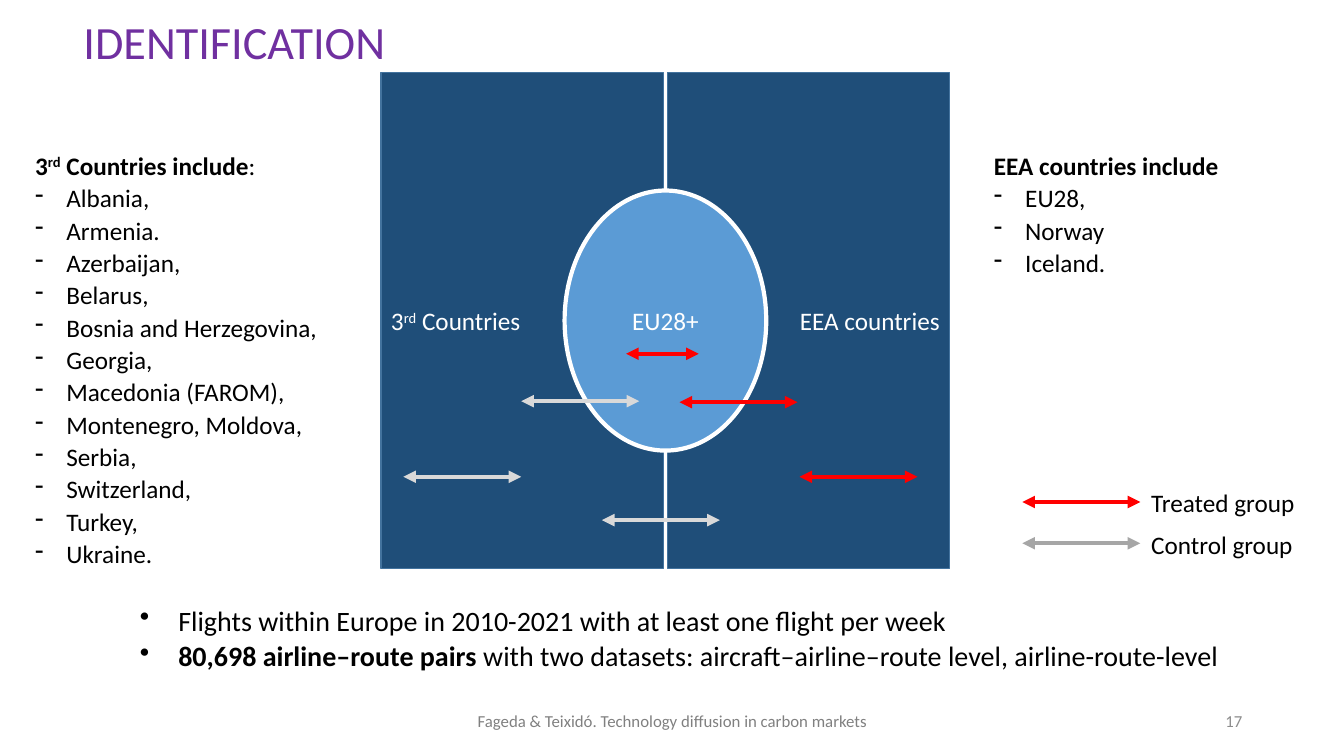
from dataclasses import dataclass

from lxml.etree import SubElement
from pptx import Presentation
from pptx.dml.color import RGBColor
from pptx.enum.shapes import MSO_CONNECTOR as Connector, MSO_SHAPE as Shape
from pptx.enum.text import MSO_ANCHOR as Anchor, MSO_AUTO_SIZE as AutoSize, PP_ALIGN as Align
from pptx.oxml.ns import qn
from pptx.util import Pt

EMU_PER_PX = 9144  # 100 px to the inch


@dataclass(frozen=True)
class Theme:
    font: str = "Calibri"
    title_size: int = 33
    summary_size: int = 20
    body_size: int = 18
    footer_size: int = 12
    title: str = "7030A0"
    text: str = "000000"
    light: str = "FFFFFF"
    footer: str = "808080"
    number: str = "8C8C8C"
    region: str = "1F4E79"
    region_edge: str = "43739E"
    union: str = "5B9BD5"
    treated: str = "FF0000"
    control: str = "D9D9D9"
    control_key: str = "A6A6A6"


@dataclass(frozen=True)
class Run:
    text: str
    bold: bool = False
    raised: bool = False


@dataclass(frozen=True)
class Line:
    """One paragraph; indent is the hanging indent of its bullet in px."""
    runs: tuple
    bullet: str = ""
    indent: int = 0
    after: int = 0


def plain(text):
    return Line((Run(text),))


def px(length):
    return round(length * EMU_PER_PX)


def rgb(color):
    return RGBColor.from_string(color)


class SlideBuilder:
    def __init__(self, slide, theme):
        self.slide = slide
        self.theme = theme

    def fill_frame(self, frame, lines, size, color, align=Align.LEFT,
                   anchor=Anchor.TOP, spacing=1.0):
        frame.word_wrap = True
        frame.vertical_anchor = anchor
        for index, line in enumerate(lines):
            paragraph = frame.add_paragraph() if index else frame.paragraphs[0]
            paragraph.alignment = align
            paragraph.line_spacing = spacing
            paragraph.space_after = Pt(line.after)
            if line.bullet:
                properties = paragraph._p.get_or_add_pPr()
                properties.set("marL", str(px(line.indent)))
                properties.set("indent", str(-px(line.indent)))
                SubElement(properties, qn("a:buChar")).set("char", line.bullet)
            for part in line.runs:
                run = paragraph.add_run()
                run.text = part.text
                run.font.name = self.theme.font
                run.font.size = Pt(size)
                run.font.bold = part.bold
                run.font.color.rgb = rgb(color)
                if part.raised:
                    run.font._element.set("baseline", "30000")

    def text(self, box, lines, size, color, grow=False, **layout):
        frame = self.slide.shapes.add_textbox(*map(px, box)).text_frame
        self.fill_frame(frame, lines, size, color, **layout)
        frame.auto_size = AutoSize.SHAPE_TO_FIT_TEXT if grow else AutoSize.NONE

    def area(self, kind, box, fill, edge, width, line, align):
        """Draw a filled region with its label in the middle."""
        shape = self.slide.shapes.add_shape(kind, *map(px, box))
        shape.shadow.inherit = False
        shape.fill.solid()
        shape.fill.fore_color.rgb = rgb(fill)
        shape.line.color.rgb = rgb(edge)
        shape.line.width = Pt(width)
        self.fill_frame(shape.text_frame, [line], self.theme.body_size,
                        self.theme.light, align, Anchor.MIDDLE)

    def double_arrow(self, left, top, color, length=117):
        connector = self.slide.shapes.add_connector(
            Connector.STRAIGHT, px(left + length), px(top), px(left), px(top))
        connector.line.color.rgb = rgb(color)
        connector.line.width = Pt(3)
        properties = connector.element.spPr
        outline = properties.find(qn("a:ln"))
        for end in ("a:headEnd", "a:tailEnd"):
            SubElement(outline, qn(end)).set("type", "triangle")
        SubElement(properties, qn("a:effectLst"))


def country_list(heading, countries):
    return [Line(heading)] + [Line((Run(name),), "-", 31) for name in countries]


def main():
    theme = Theme()
    presentation = Presentation()
    presentation.slide_width, presentation.slide_height = px(1333), px(750)
    slide = presentation.slides.add_slide(presentation.slide_layouts[6])
    builder = SlideBuilder(slide, theme)

    builder.text((73, 21, 1150, 52), [plain("IDENTIFICATION")], theme.title_size,
                 theme.title, anchor=Anchor.MIDDLE, spacing=0.7)

    summary = [
        Line((Run("Flights within Europe in 2010-2021 with at least one flight per week"),),
             "•", 38),
        Line((Run("80,698 airline–route pairs ", bold=True),
              Run("with two datasets: aircraft–airline–route level, airline-route-level")),
             "•", 38, after=8),
    ]
    builder.text((129, 591, 1150, 81), summary, theme.summary_size, theme.text,
                 grow=True, align=Align.JUSTIFY, spacing=1.07)

    third_heading = (Run("3", bold=True), Run("rd", bold=True, raised=True),
                     Run(" Countries include", bold=True), Run(":"))
    third_countries = (
        "Albania,", "Armenia.", "Azerbaijan,", "Belarus,", "Bosnia and Herzegovina,",
        "Georgia,", "Macedonia (FAROM),", "Montenegro, Moldova,", "Serbia,",
        "Switzerland,", "Turkey,", "Ukraine.")
    eea_heading = (Run("EEA countries include", bold=True),)
    eea_countries = ("EU28,", "Norway", "Iceland.")
    for box, heading, countries in (
            ((25, 142, 329, 431), third_heading, third_countries),
            ((976, 142, 332, 140), eea_heading, eea_countries)):
        builder.text(box, country_list(heading, countries), theme.body_size,
                     theme.text, grow=True, spacing=1.07)

    third_label = Line((Run("3"), Run("rd", raised=True), Run(" Countries")))
    for left, label, align in ((378, third_label, Align.LEFT),
                               (662, plain("EEA countries"), Align.RIGHT)):
        builder.area(Shape.RECTANGLE, (left, 72, 280, 492), theme.region,
                     theme.region_edge, 1, label, align)
    builder.area(Shape.OVAL, (560, 189, 200, 258), theme.union, theme.light, 3,
                 plain("EU28+"), Align.CENTER)

    builder.double_arrow(621, 351, theme.treated, length=72)
    for left, top, color in ((674, 399, theme.treated), (793, 473, theme.treated),
                             (400, 473, theme.control), (517, 398, theme.control),
                             (597, 516, theme.control)):
        builder.double_arrow(left, top, color)

    for row, (name, color) in enumerate((("Treated group", theme.treated),
                                         ("Control group", theme.control_key))):
        offset = row * 41
        builder.double_arrow(1014, 498 + offset, color)
        builder.text((1132, 479 + offset, 166, 40), [plain(name)], theme.body_size,
                     theme.text, grow=True)

    for box, label, color, align in (
            ((442, 695, 450, 40), "Fageda & Teixidó. Technology diffusion in carbon markets",
             theme.footer, Align.CENTER),
            ((942, 695, 300, 40), "17", theme.number, Align.RIGHT)):
        builder.text(box, [plain(label)], theme.footer_size, color,
                     align=align, anchor=Anchor.MIDDLE)

    presentation.save("out.pptx")


if __name__ == "__main__":
    main()
